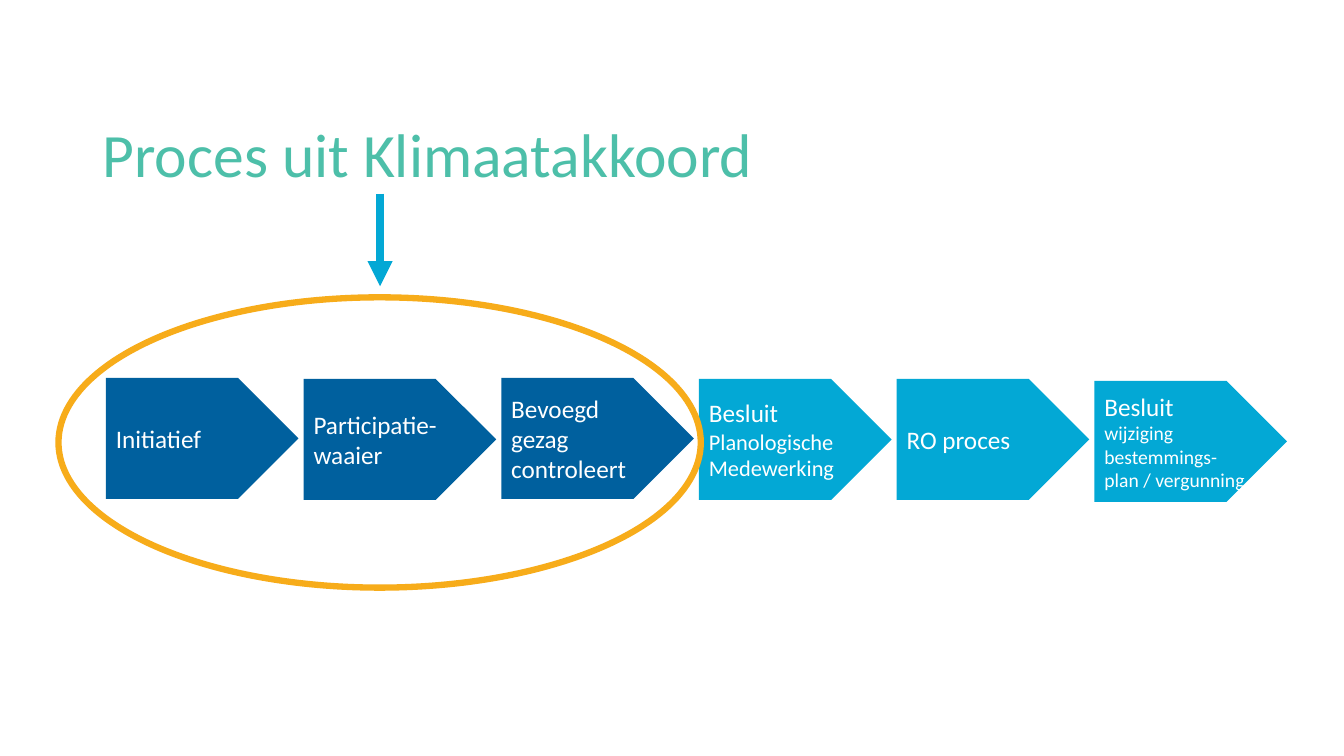
from lxml.etree import SubElement
from pptx import Presentation
from pptx.dml.color import RGBColor
from pptx.enum.shapes import MSO_CONNECTOR, MSO_SHAPE
from pptx.enum.text import MSO_ANCHOR, PP_ALIGN
from pptx.oxml.ns import qn
from pptx.util import Inches, Pt

WIDE, HIGH = Inches(13.33), Inches(7.5)
FONT = "Calibri"
COLORS = {
    "title": "4DBFA9",
    "dark": "00609E",
    "light": "03A8D5",
    "ring": "F7AC1A",
    "white": "FFFFFF",
}

# Step row, in percent of the slide's width and height
LEFT, PITCH, WIDTH = 7.88, 14.71, 14.33
TOP, HEIGHT = 50, 16

# Fill, drop below the row's top, paragraphs of (text, size) runs
STEPS = [
    ("dark", 0, [[("Initiatief", 18)]]),
    ("dark", 0.13, [[("Participatie-waaier", 18)]]),
    ("dark", 0, [[("Bevoegd gezag controleert", 18)]]),
    ("light", 0.13, [[("Besluit", 18)], [("Planologische", 16)],
                     [("Medewerking", 16)]]),
    ("light", 0.13, [[("RO proces", 18)]]),
    ("light", 0.4, [[("Besluit", 18),
                     (" wijziging bestemmings-plan / vergunning", 14)]]),
]


def color(name):
    return RGBColor.from_string(COLORS[name])


def place(x, y):
    """Turn percent of the slide's width and height into lengths."""
    return int(WIDE * x / 100), int(HIGH * y / 100)


def write(shape, paras, tint, spacing=None):
    frame = shape.text_frame
    frame.word_wrap = True
    frame.vertical_anchor = MSO_ANCHOR.MIDDLE
    for i, runs in enumerate(paras):
        para = frame.add_paragraph() if i else frame.paragraphs[0]
        para.alignment = PP_ALIGN.LEFT
        if spacing:
            para.line_spacing = spacing
        for text, size in runs:
            run = para.add_run()
            run.text = text
            run.font.name = FONT
            run.font.size = Pt(size)
            run.font.color.rgb = color(tint)


def add_title(slide, text):
    box = slide.shapes.add_textbox(*place(6.9, 11.2), *place(86.27, 19.33))
    write(box, [[(text, 44)]], "title", 0.9)


def add_step(slide, col, fill, drop, paras):
    step = slide.shapes.add_shape(
        MSO_SHAPE.PENTAGON,
        *place(LEFT + col * PITCH, TOP + drop), *place(WIDTH, HEIGHT))
    step.shadow.inherit = False
    step.fill.solid()
    step.fill.fore_color.rgb = color(fill)
    step.line.fill.background()
    write(step, paras, "white")


def add_ring(slide):
    ring = slide.shapes.add_shape(
        MSO_SHAPE.OVAL, *place(4.35, 39.33), *place(47.79, 38.4))
    ring.shadow.inherit = False
    ring.fill.background()
    ring.line.color.rgb = color("ring")
    ring.line.width = Pt(4.5)


def add_arrow(slide):
    arrow = slide.shapes.add_connector(
        MSO_CONNECTOR.STRAIGHT, *place(28.28, 25.6), *place(28.28, 37.87))
    arrow.line.color.rgb = color("light")
    arrow.line.width = Pt(6)
    SubElement(arrow.line._get_or_add_ln(), qn("a:tailEnd"), type="triangle")
    SubElement(arrow._element.spPr, qn("a:effectLst"))


def main():
    deck = Presentation()
    deck.slide_width, deck.slide_height = WIDE, HIGH
    slide = deck.slides.add_slide(deck.slide_layouts[6])
    add_title(slide, "Proces uit Klimaatakkoord")
    for col, step in enumerate(STEPS):
        add_step(slide, col, *step)
    add_ring(slide)
    add_arrow(slide)
    deck.save("out.pptx")


if __name__ == "__main__":
    main()
